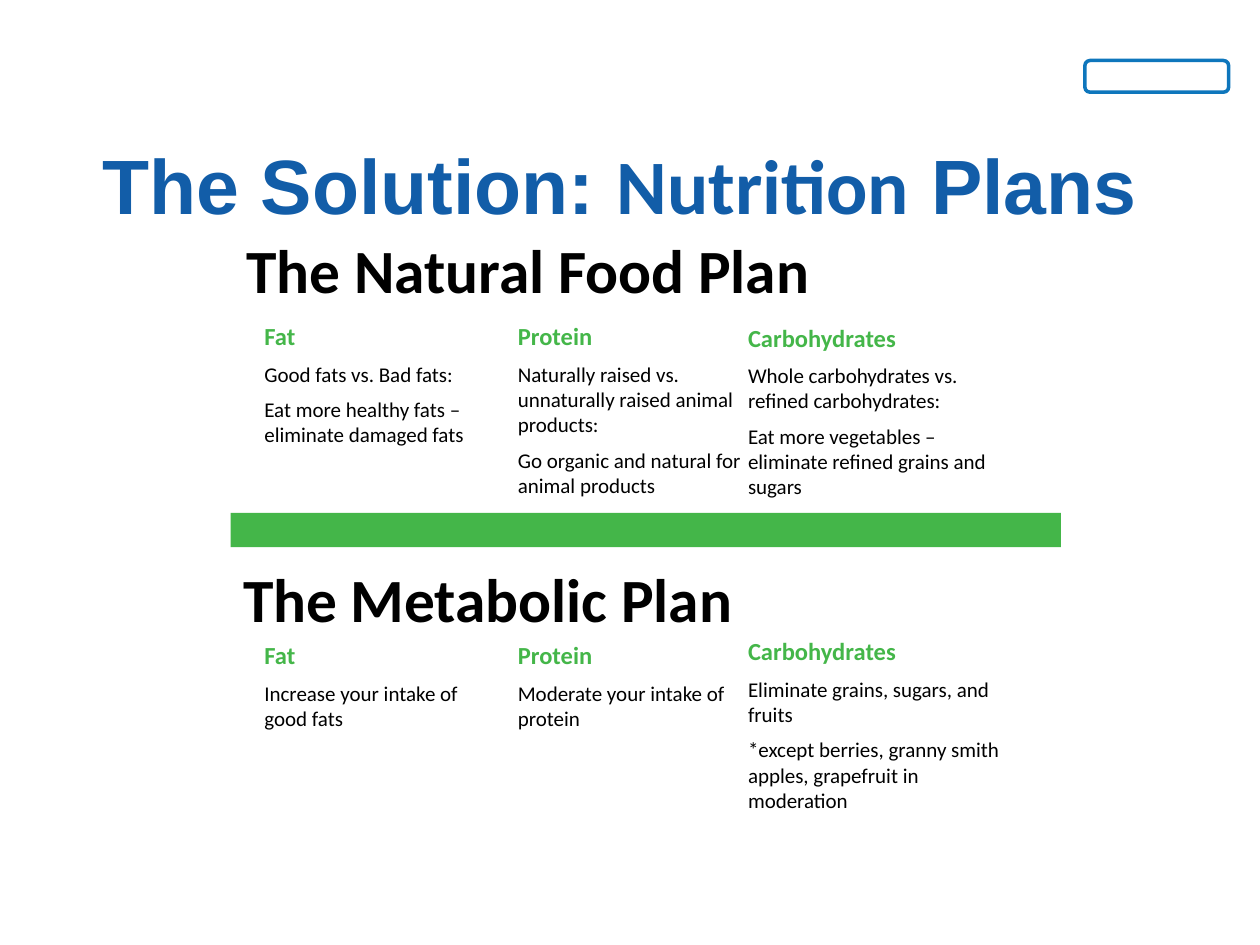
from dataclasses import dataclass

from pptx import Presentation
from pptx.dml.color import RGBColor as RGB
from pptx.enum.shapes import MSO_SHAPE as Shape
from pptx.enum.text import MSO_ANCHOR as Anchor, MSO_AUTO_SIZE as AutoSize, PP_ALIGN as Align
from pptx.util import Cm, Pt


@dataclass(frozen=True)
class Theme:
    blue: RGB = RGB(0x12, 0x5D, 0xA8)
    outline: RGB = RGB(0x0E, 0x76, 0xBC)
    green: RGB = RGB(0x44, 0xB6, 0x49)
    black: RGB = RGB(0, 0, 0)
    white: RGB = RGB(255, 255, 255)
    title: float = 44
    plan: float = 35.1
    heading: float = 14
    body: float = 12


theme = Theme()


def add_text(p, text, size=theme.body, color=theme.black, bold=False, font="Calibri", before=0):
    p.space_before = Pt(before)
    r = p.add_run()
    r.text = text
    r.font.name = font
    r.font.size = Pt(size)
    r.font.bold = bold
    r.font.color.rgb = color


def add_box(kind, left, top, width, height, fill):
    sp = s.shapes.add_shape(kind, Cm(left), Cm(top), Cm(width), Cm(height))
    sp.shadow.inherit = False
    sp.fill.solid()
    sp.fill.fore_color.rgb = fill
    sp.line.fill.background()
    return sp


prs = Presentation()
prs.slide_width, prs.slide_height = Cm(25.4), Cm(19.05)
s = prs.slides.add_slide(prs.slide_layouts[5])

title = s.shapes.title
title.left, title.top, title.width, title.height = Cm(0.43), Cm(2.54), Cm(24.13), Cm(2.34)
tf = title.text_frame
tf.auto_size = AutoSize.NONE
tf.word_wrap = True
tf.vertical_anchor = Anchor.MIDDLE
p = tf.paragraphs[0]
p.alignment = Align.CENTER
for text, font in [("The Solution: ", "Arial"), ("Nutrition", "Calibri"), (" Plans", "Arial")]:
    add_text(p, text, size=theme.title, color=theme.blue, bold=True, font=font)

tag = add_box(Shape.ROUNDED_RECTANGLE, 21.87, 1.22, 2.9, 0.64, theme.white)
tag.line.color.rgb = theme.outline
tag.line.width = Pt(2)

plans = [
    ("The Natural Food Plan", 4.72, 4.45, 16.74, 1.93),
    ("The Metabolic Plan", 4.65, 11, 16.08, 2.11),
]
for name, left, top, width, height in plans:
    sp = add_box(Shape.RECTANGLE, left, top, width, height, theme.white)
    tf = sp.text_frame
    tf.word_wrap = True
    tf.vertical_anchor = Anchor.MIDDLE
    p = tf.paragraphs[0]
    p.alignment = Align.LEFT
    add_text(p, name, size=theme.plan, bold=True)

nutrients = [
    (5.08, 6.35, 5.08, 2.9, "Fat",
     ["Good fats vs. Bad fats:", "Eat more healthy fats – eliminate damaged fats"]),
    (10.19, 6.35, 5.05, 3.94, "Protein",
     ["Naturally raised vs. unnaturally raised animal products:",
      "Go organic and natural for animal products"]),
    (14.83, 6.38, 5.69, 3.94, "Carbohydrates",
     ["Whole carbohydrates vs. refined carbohydrates:",
      "Eat more vegetables – eliminate refined grains and sugars"]),
    (5.08, 12.78, 4.85, 2.13, "Fat", ["Increase your intake of good fats"]),
    (10.19, 12.78, 4.85, 2.13, "Protein", ["Moderate your intake of protein"]),
    (14.83, 12.7, 5.69, 3.94, "Carbohydrates",
     ["Eliminate grains, sugars, and fruits",
      "*except berries, granny smith apples, grapefruit in moderation"]),
]
for left, top, width, height, heading, lines in nutrients:
    tf = s.shapes.add_textbox(Cm(left), Cm(top), Cm(width), Cm(height)).text_frame
    tf.word_wrap = True
    tf.auto_size = AutoSize.SHAPE_TO_FIT_TEXT
    add_text(tf.paragraphs[0], heading, size=theme.heading, color=theme.green, bold=True)
    for line in lines:
        add_text(tf.add_paragraph(), line, before=6)

add_box(Shape.RECTANGLE, 4.65, 10.34, 16.74, 0.69, theme.green)

prs.save("out.pptx")
